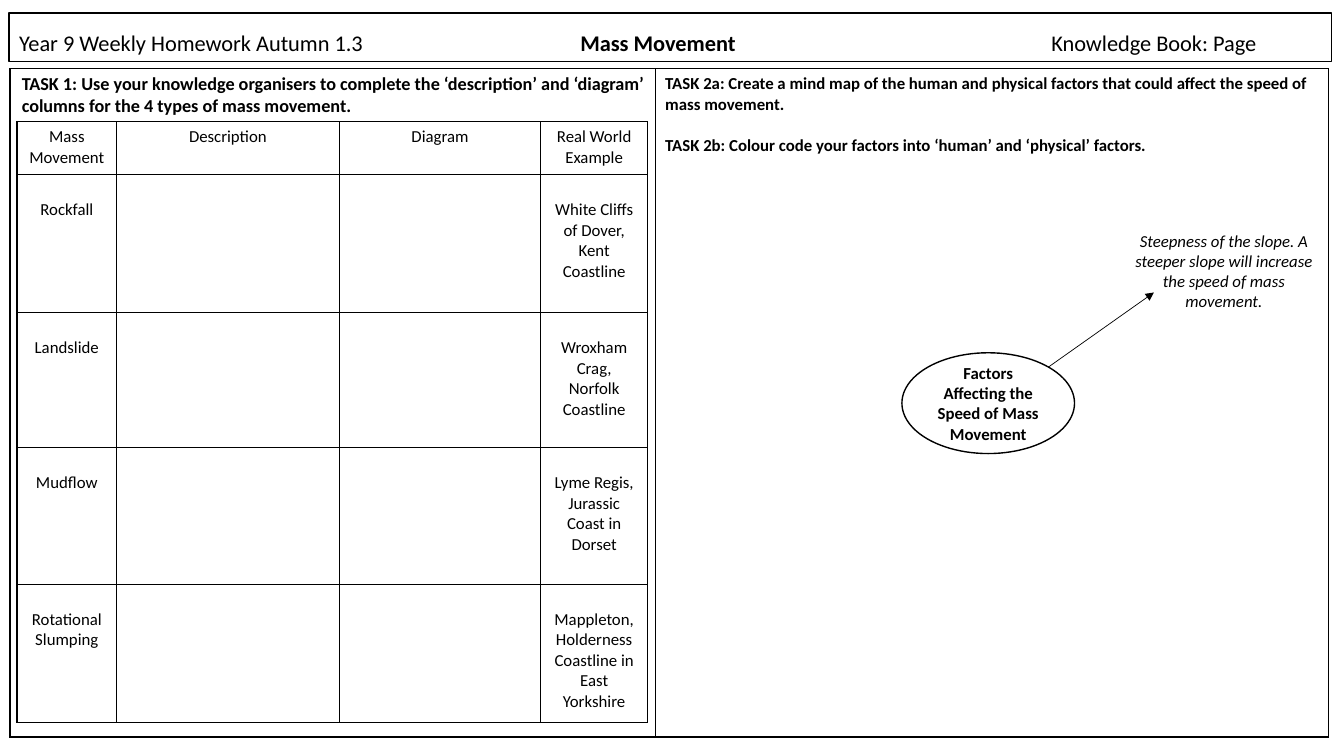
from lxml import etree
from pptx import Presentation
from pptx.dml.color import RGBColor
from pptx.enum.shapes import MSO_CONNECTOR, MSO_SHAPE
from pptx.enum.text import MSO_ANCHOR, MSO_AUTO_SIZE, PP_ALIGN
from pptx.oxml.ns import qn
from pptx.util import Cm, Pt

LEFT, CENTER = PP_ALIGN.LEFT, PP_ALIGN.CENTER
BOTTOM, MIDDLE = MSO_ANCHOR.BOTTOM, MSO_ANCHOR.MIDDLE
FIT_SHAPE = MSO_AUTO_SIZE.SHAPE_TO_FIT_TEXT
NO_RESIZE = MSO_AUTO_SIZE.NONE
ELLIPSE, STRAIGHT = MSO_SHAPE.OVAL, MSO_CONNECTOR.STRAIGHT

COLOURS = {"ink": "000000", "paper": "FFFFFF"}
INK = RGBColor.from_string(COLOURS["ink"])
PAPER = RGBColor.from_string(COLOURS["paper"])
FONT = "Calibri"


def format_text(text_frame, size=12, bold=False, italic=False, align=LEFT):
    for paragraph in text_frame.paragraphs:
        paragraph.alignment = align
        for run in paragraph.runs:
            run.font.name = FONT
            run.font.size = Pt(size)
            run.font.bold = bold
            run.font.italic = italic
            run.font.color.rgb = INK


def add_ruled_table(slide, left, top, widths, heights):
    """Add an unfilled table with black rules; lengths are in centimetres."""
    frame = slide.shapes.add_table(
        len(heights), len(widths),
        Cm(left), Cm(top), Cm(sum(widths)), Cm(sum(heights)))
    table = frame.table
    table.first_row = False
    table.horz_banding = False
    for column, width in zip(table.columns, widths):
        column.width = Cm(width)
    for row, height in zip(table.rows, heights):
        row.height = Cm(height)
    for cell in table.iter_cells():
        properties = cell._tc.get_or_add_tcPr()
        for side in ("a:lnL", "a:lnR", "a:lnT", "a:lnB"):
            border = etree.SubElement(properties, qn(side), w=str(Pt(1)))
            fill = etree.SubElement(border, qn("a:solidFill"))
            etree.SubElement(fill, qn("a:srgbClr"), val=COLOURS["ink"])
        cell.fill.background()
    return table


presentation = Presentation()
presentation.slide_width = Cm(33.87)
presentation.slide_height = Cm(19.05)
slide = presentation.slides.add_slide(presentation.slide_layouts[5])

# Heading bar: tab stops place the topic and the page reference
title = slide.shapes.title
title.left, title.top, title.width, title.height = Cm(0.23), Cm(0.33), Cm(33.32), Cm(1.22)
title.fill.solid()
title.fill.fore_color.rgb = PAPER
title.line.color.rgb = INK
title.line.width = Pt(1)
title.text_frame.vertical_anchor = BOTTOM
title.text_frame.auto_size = NO_RESIZE
heading = title.text_frame.paragraphs[0]
heading.line_spacing = 0.9
for text in ("Year 9 Weekly Homework Autumn 1.3", "\tMass Movement", "\tKnowledge Book: Page"):
    heading.add_run().text = text
format_text(title.text_frame, size=16)
heading.runs[1].font.bold = True
tab_list = etree.SubElement(heading._p.get_or_add_pPr(), qn("a:tabLst"))
for position in (14.14, 26.01):
    etree.SubElement(tab_list, qn("a:tab"), pos=str(Cm(position)), algn="l")

# Two task panels
panels = add_ruled_table(slide, 0.25, 1.73, (16.26, 16.97), (16.84,))
task_2 = panels.cell(0, 1).text_frame
task_2.text = (
    "TASK 2a: Create a mind map of the human and physical factors "
    "that could affect the speed of mass movement.\n"
    "TASK 2b: Colour code your factors into ‘human’ and ‘physical’ factors.")
format_text(task_2, bold=True)
task_2.paragraphs[1].space_before = Pt(14.6)

# Task 1: types of mass movement
task_1 = slide.shapes.add_textbox(Cm(0.3), Cm(1.7), Cm(16.51), Cm(1.37)).text_frame
task_1.word_wrap = True
task_1.auto_size = FIT_SHAPE
task_1.text = (
    "TASK 1: Use your knowledge organisers to complete the ‘description’ "
    "and ‘diagram’ columns for the 4 types of mass movement.")
format_text(task_1, size=13, bold=True)

movement_rows = (
    ("Mass Movement", "Description", "Diagram", "Real World Example"),
    ("Rockfall", "", "", "White Cliffs of Dover, Kent Coastline"),
    ("Landslide", "", "", "Wroxham Crag, Norfolk Coastline"),
    ("Mudflow", "", "", "Lyme Regis, Jurassic Coast in Dorset"),
    ("Rotational Slumping", "", "", "Mappleton, Holderness Coastline in East Yorkshire"),
)
movements = add_ruled_table(
    slide, 0.43, 3.07, (2.51, 5.61, 5.08, 2.69), (1.32, 3.48, 3.4, 3.45, 3.48))
for row_index, texts in enumerate(movement_rows):
    for column_index, text in enumerate(texts):
        cell = movements.cell(row_index, column_index)
        if row_index > 0:
            cell.margin_top = Cm(0.64)
        cell.text_frame.text = text
        format_text(cell.text_frame, align=CENTER)

# Task 2: start of the mind map
hub = slide.shapes.add_shape(ELLIPSE, Cm(22.73), Cm(8.89), Cm(4.35), Cm(2.54))
hub.shadow.inherit = False
hub.fill.solid()
hub.fill.fore_color.rgb = PAPER
hub.line.color.rgb = INK
hub.line.width = Pt(1)
hub.text_frame.word_wrap = True
hub.text_frame.vertical_anchor = MIDDLE
hub.text_frame.text = "Factors Affecting the Speed of Mass Movement"
format_text(hub.text_frame, bold=True, align=CENTER)

factor = slide.shapes.add_textbox(Cm(28.24), Cm(5.69), Cm(5.21), Cm(2.31)).text_frame
factor.word_wrap = True
factor.auto_size = FIT_SHAPE
factor.text = "Steepness of the slope. A steeper slope will increase the speed of mass movement."
format_text(factor, italic=True, align=CENTER)

arrow = slide.shapes.add_connector(STRAIGHT, Cm(26.42), Cm(9.25), Cm(29.08), Cm(7.37))
arrow.line.color.rgb = INK
arrow.line.width = Pt(0.5)
etree.SubElement(arrow.line._get_or_add_ln(), qn("a:tailEnd"), type="triangle")
etree.SubElement(arrow._element.spPr, qn("a:effectLst"))

presentation.save("out.pptx")
